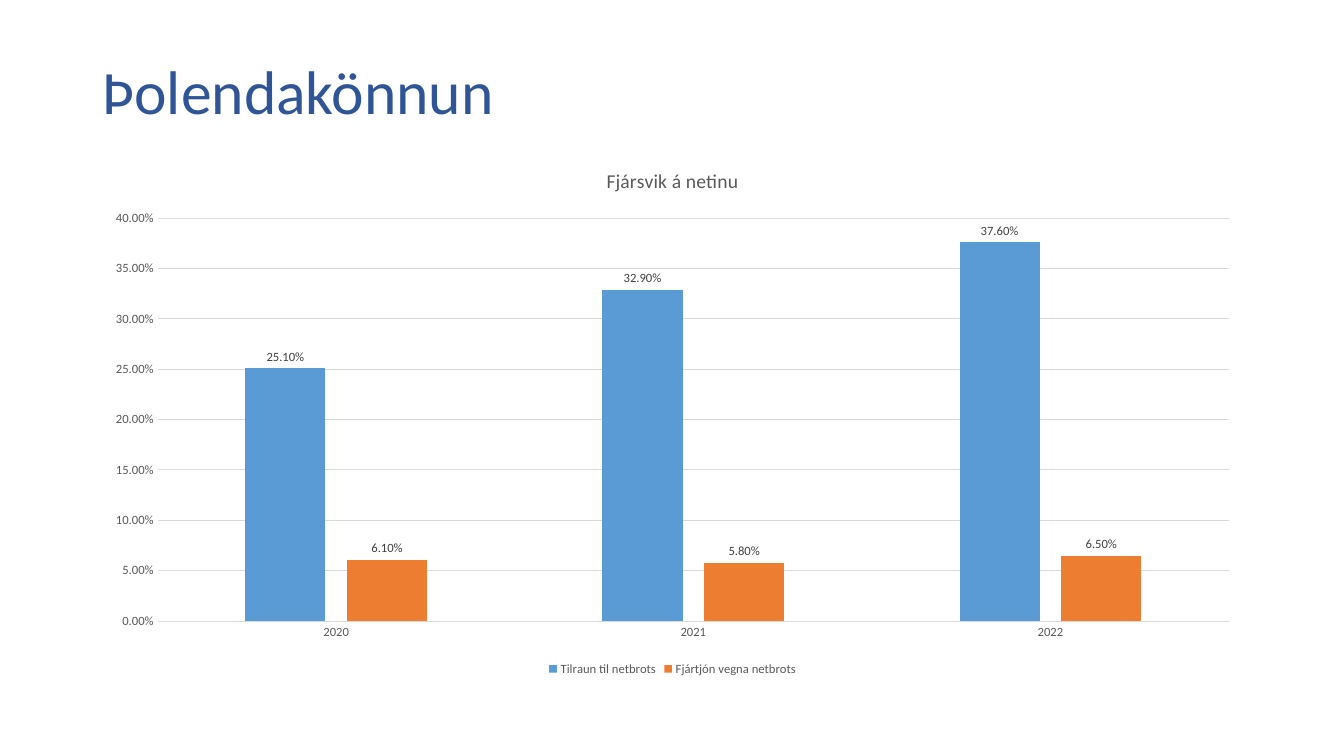
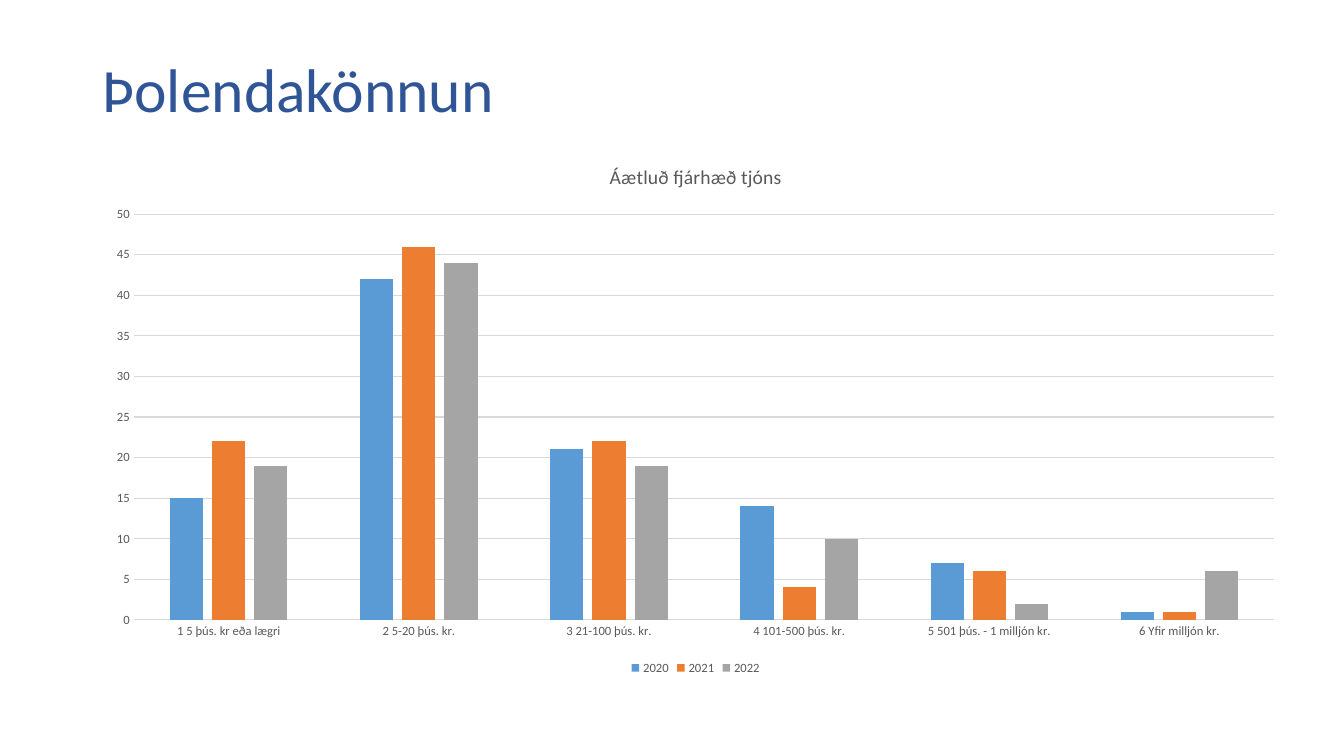
import pptx
import pptx.chart.data
import pptx.dml.color
import pptx.enum.chart
import pptx.enum.text
import pptx.util

FONT = "Calibri"
TITLE, BODY, LABEL, GRID = "2F5597", "595959", "404040", "D9D9D9"
SERIES = ["5B9BD5", "ED7D31", "A5A5A5"]
WIDTH, HEIGHT = 13.33, 7.5
LEFT, TOP = 0.92, 0.4


def rgb(value):
    return pptx.dml.color.RGBColor.from_string(value)


def inches(*box):
    return [pptx.util.Inches(v) for v in box]


def style_font(font, size, color):
    font.name = FONT
    font.size = pptx.util.Pt(size)
    font.bold = False
    font.color.rgb = rgb(color)


def style_line(line, color):
    line.color.rgb = rgb(color)
    line.width = pptx.util.Pt(0.75)


def write(tf, text, size, color):
    p = tf.paragraphs[0]
    r = p.add_run()
    r.text = text
    style_font(r.font, size, color)
    return p


def add_title(s, text, box):
    tf = s.shapes.add_textbox(*inches(*box)).text_frame
    tf.word_wrap = True
    tf.vertical_anchor = pptx.enum.text.MSO_ANCHOR.MIDDLE
    write(tf, text, 44, TITLE).line_spacing = 0.9


def style_axes(chart, top, step, fmt):
    for axis in (chart.category_axis, chart.value_axis):
        axis.major_tick_mark = pptx.enum.chart.XL_TICK_MARK.NONE
        axis.minor_tick_mark = pptx.enum.chart.XL_TICK_MARK.NONE
        style_font(axis.tick_labels.font, 9, BODY)
    style_line(chart.category_axis.format.line, GRID)
    axis = chart.value_axis
    axis.format.line.fill.background()
    axis.has_major_gridlines = True
    style_line(axis.major_gridlines.format.line, GRID)
    axis.minimum_scale, axis.maximum_scale, axis.major_unit = 0, top, step
    axis.tick_labels.number_format = fmt
    axis.tick_labels.number_format_is_linked = False


def add_labels(series, fmt):
    labels = series.data_labels
    labels.show_value = True
    labels.position = pptx.enum.chart.XL_LABEL_POSITION.OUTSIDE_END
    labels.number_format = fmt
    labels.number_format_is_linked = False
    style_font(labels.font, 9, LABEL)


def add_columns(s, box, title, cats, series, top, step, fmt, labelled):
    data = pptx.chart.data.CategoryChartData(number_format=fmt)
    data.categories = cats
    for name, values in series.items():
        data.add_series(name, values)
    kind = pptx.enum.chart.XL_CHART_TYPE.COLUMN_CLUSTERED
    chart = s.shapes.add_chart(kind, *inches(*box), data).chart
    style_font(chart.font, 10, "000000")
    chart.has_title = True
    write(chart.chart_title.text_frame, title, 14, BODY)
    chart.chart_title.include_in_layout = False
    chart.has_legend = True
    chart.legend.position = pptx.enum.chart.XL_LEGEND_POSITION.BOTTOM
    chart.legend.include_in_layout = False
    style_font(chart.legend.font, 9, BODY)
    style_axes(chart, top, step, fmt)
    plot = chart.plots[0]
    plot.gap_width, plot.overlap, plot.vary_by_categories = 219, -27, False
    for ser, color in zip(plot.series, SERIES):
        ser.format.fill.solid()
        ser.format.fill.fore_color.rgb = rgb(color)
        ser.invert_if_negative = False
        if labelled:
            add_labels(ser, fmt)


def add_survey_slide(prs, title_height, chart_size, **chart):
    s = prs.slides.add_slide(prs.slide_layouts[6])
    add_title(s, "Þolendakönnun", (LEFT, TOP, WIDTH - 2 * LEFT, title_height))
    add_columns(s, (LEFT, TOP + title_height, *chart_size), **chart)


def main():
    prs = pptx.Presentation()
    prs.slide_width, prs.slide_height = inches(WIDTH, HEIGHT)
    add_survey_slide(
        prs, 1.07, (11.5, 5.28),
        title="Fjársvik á netinu",
        cats=["2020", "2021", "2022"],
        series={
            "Tilraun til netbrots": [0.251, 0.329, 0.376],
            "Fjártjón vegna netbrots": [0.061, 0.058, 0.065],
        },
        top=0.4, step=0.05, fmt="0.00%", labelled=True)
    add_survey_slide(
        prs, 1.03, (11.96, 5.31),
        title="Áætluð fjárhæð tjóns",
        cats=["1 5 þús. kr eða lægri", "2 5-20 þús. kr.",
              "3 21-100 þús. kr.", "4 101-500 þús. kr.",
              "5 501 þús. - 1 milljón kr.", "6 Yfir milljón kr."],
        series={
            "2020": [15, 42, 21, 14, 7, 1],
            "2021": [22, 46, 22, 4, 6, 1],
            "2022": [19, 44, 19, 10, 2, 6],
        },
        top=50, step=5, fmt="General", labelled=False)
    prs.save("out.pptx")


if __name__ == "__main__":
    main()
